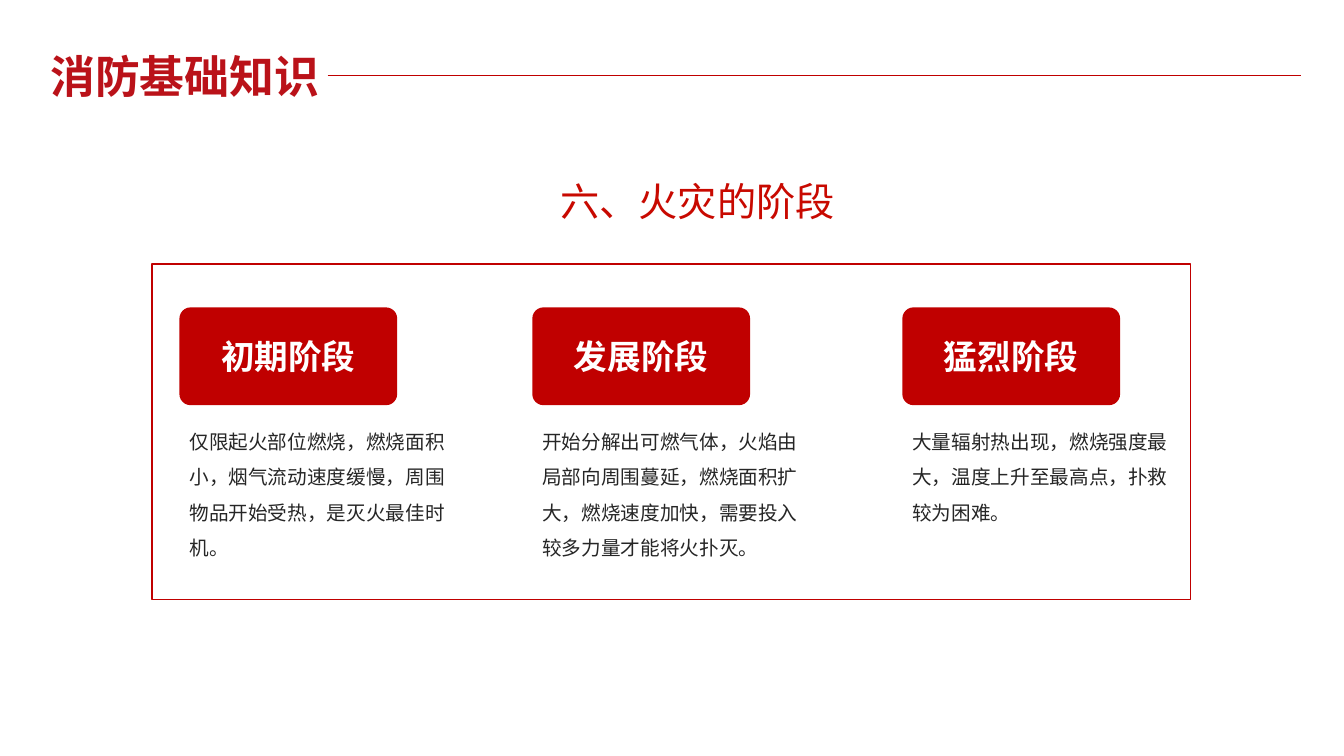
from lxml.etree import SubElement
from pptx import Presentation
from pptx.dml.color import RGBColor
from pptx.enum.shapes import MSO_CONNECTOR as Connector, MSO_SHAPE as Shape
from pptx.enum.text import MSO_ANCHOR as Anchor, MSO_AUTO_SIZE as AutoSize, PP_ALIGN as Align
from pptx.oxml.ns import qn
from pptx.util import Inches, Pt

# Content
TITLE = "消防基础知识"
SUBTITLE = "六、火灾的阶段"
# left edge, stage, description, description height
STAGES = [
    (1.78, "初期阶段", "仅限起火部位燃烧，燃烧面积小，烟气流动速度缓慢，周围物品开始受热，是灭火最佳时机。", 1.47),
    (5.28, "发展阶段", "开始分解出可燃气体，火焰由局部向周围蔓延，燃烧面积扩大，燃烧速度加快，需要投入较多力量才能将火扑灭。", 1.47),
    (8.95, "猛烈阶段", "大量辐射热出现，燃烧强度最大，温度上升至最高点，扑救较为困难。", 1.12),
]


class Theme:
    font = "Noto Sans CJK SC"
    red = RGBColor.from_string("C00000")
    bright_red = RGBColor.from_string("C80900")
    deep_red = RGBColor.from_string("BA1219")
    ink = RGBColor.from_string("262626")
    white = RGBColor.from_string("FFFFFF")
    title, subtitle, stage, body = Pt(32), Pt(28), Pt(24), Pt(14)


def inches(*lengths):
    return [Inches(length) for length in lengths]


def write(frame, text, size, color, bold=False):
    paragraph = frame.paragraphs[0]
    paragraph.text = text
    font = paragraph.font
    font.size, font.bold, font.name = size, bold, Theme.font
    font.color.rgb = color
    SubElement(font._element, qn("a:ea"), typeface=Theme.font)
    return paragraph


def add_text(box, text, size, color, bold=False, wrap=True):
    frame = slide.shapes.add_textbox(*inches(*box)).text_frame
    frame.word_wrap = wrap
    frame.auto_size = AutoSize.SHAPE_TO_FIT_TEXT
    return write(frame, text, size, color, bold)


prs = Presentation()
prs.slide_width, prs.slide_height = inches(13.33, 7.5)
slide = prs.slides.add_slide(prs.slide_layouts[6])

# Subtitle
add_text((5.46, 1.71, 2.95, 0.57), SUBTITLE, Theme.subtitle, Theme.bright_red, wrap=False)

# Stages: description below a red label
for left, stage, description, height in STAGES:
    body = add_text((left, 4.1, 2.78, height), description, Theme.body, Theme.ink)
    body.line_spacing = 1.5

    label = slide.shapes.add_shape(Shape.ROUNDED_RECTANGLE, *inches(left, 3.05, 2.16, 0.97))
    label.adjustments[0] = 0.114
    label.shadow.inherit = False
    label.fill.solid()
    label.fill.fore_color.rgb = Theme.red
    label.line.fill.background()
    label.text_frame.vertical_anchor = Anchor.MIDDLE
    write(label.text_frame, stage, Theme.stage, Theme.white, bold=True).alignment = Align.CENTER

# Title with gradient letters and a rule
title = add_text((0.4, 0.43, 3.51, 0.64), TITLE, Theme.title, Theme.deep_red, bold=True)
letters = title.font.fill
letters.gradient()
letters.gradient_angle = 90
for stop, color, position in zip(letters.gradient_stops, (Theme.deep_red, Theme.bright_red), (0, 0.98)):
    stop.color.rgb = color
    stop.position = position

rule = slide.shapes.add_connector(Connector.STRAIGHT, *inches(3.25, 0.75, 12.9, 0.75))
rule.line.color.rgb = Theme.red
rule.line.width = Pt(0.5)
SubElement(rule._element.spPr, qn("a:effectLst"))

# Frame around the stages
border = slide.shapes.add_shape(Shape.RECTANGLE, *inches(1.51, 2.62, 10.3, 3.33))
border.shadow.inherit = False
border.fill.background()
border.line.color.rgb = Theme.red
border.line.width = Pt(1)

prs.save("out.pptx")
